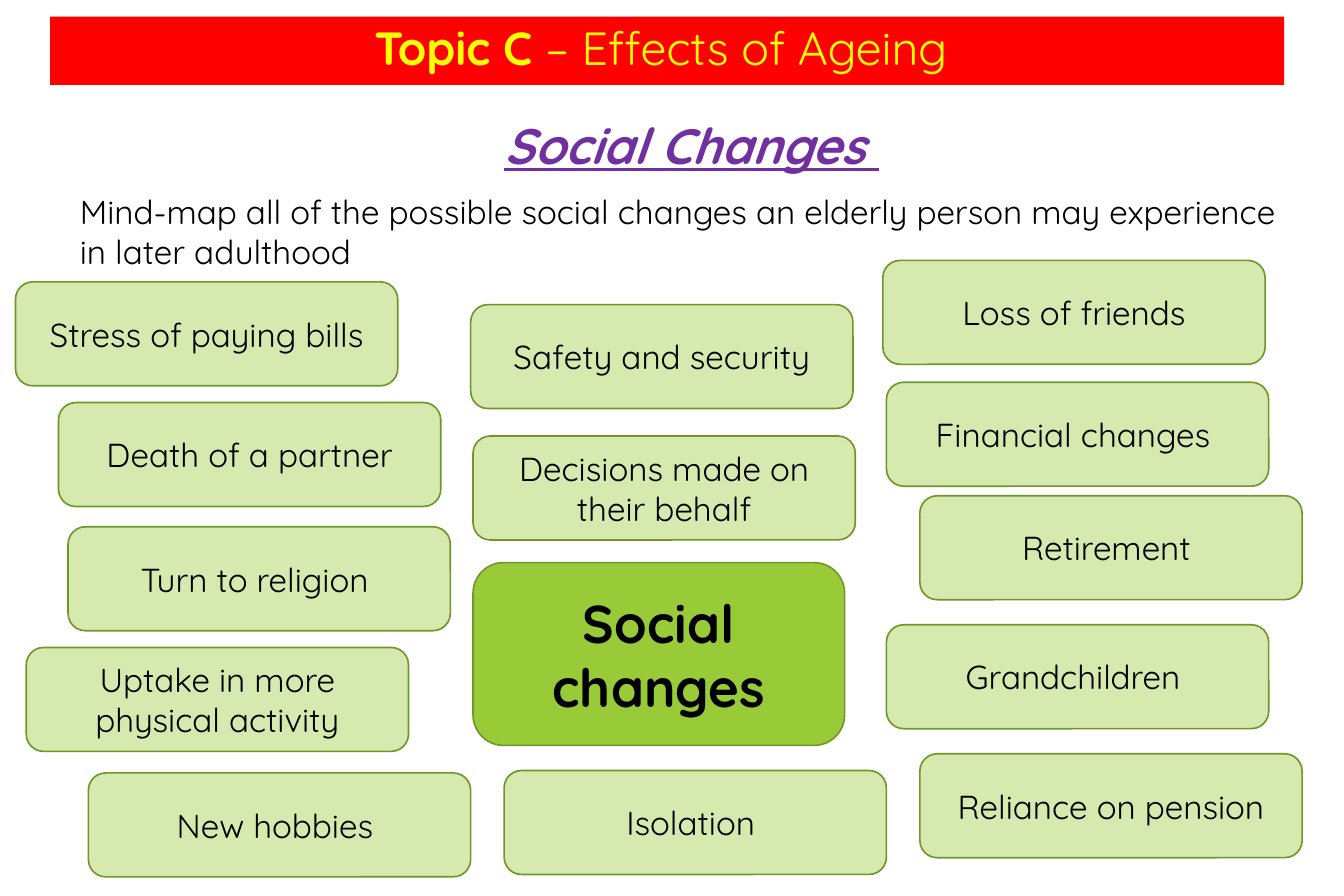
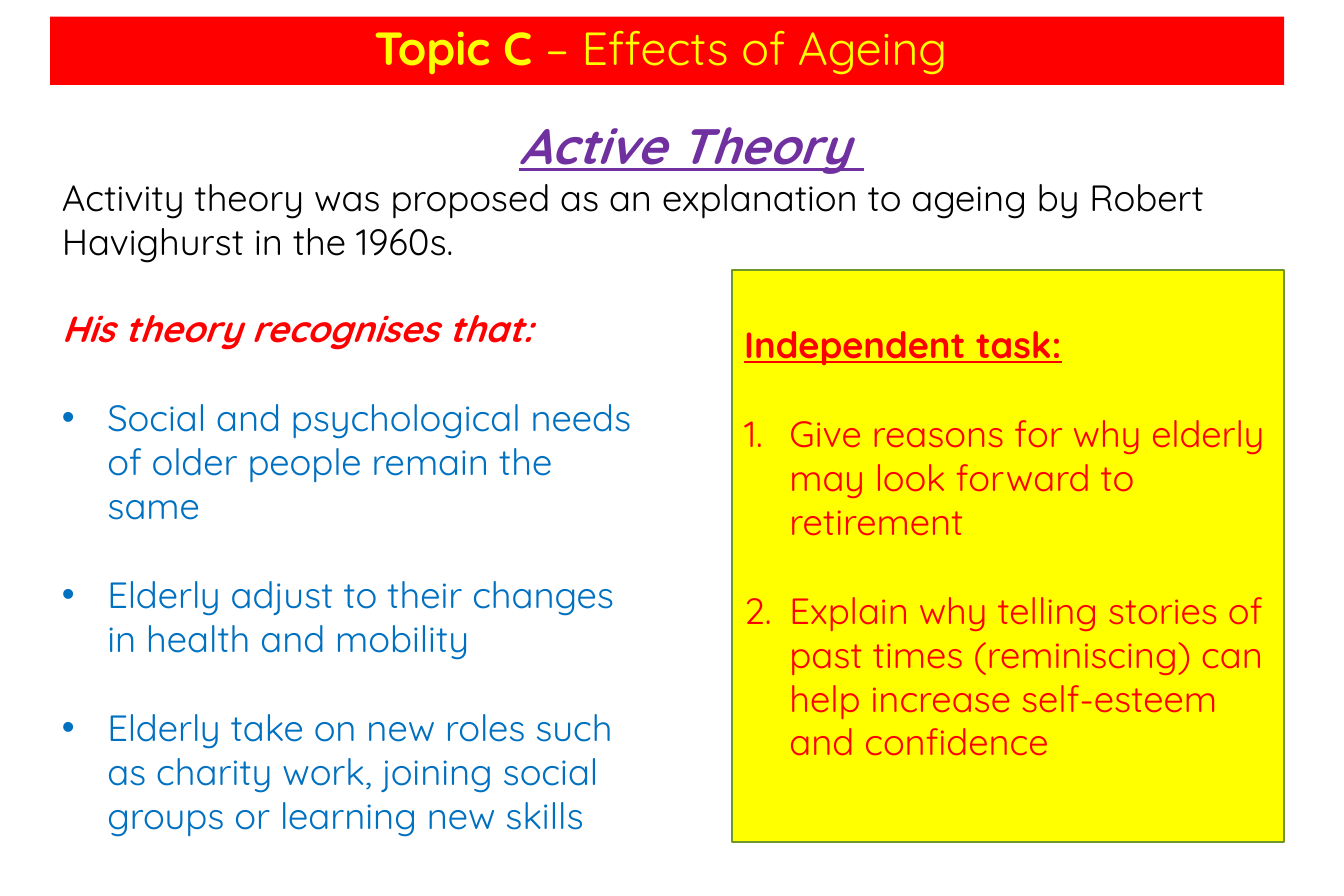
"""Build two lesson slides on the social effects of ageing and activity theory."""
from lxml.etree import SubElement
from pptx import Presentation
from pptx.dml.color import RGBColor
from pptx.enum.shapes import MSO_SHAPE
from pptx.enum.text import MSO_ANCHOR, PP_ALIGN
from pptx.oxml.ns import qn
from pptx.util import Inches, Pt

FONT = "Quicksand"
BLACK, RED, YELLOW = "000000", "FF0000", "FFFF00"
PURPLE, BLUE = "7030A0", "0070C0"
GREEN, PALE_GREEN, DARK_GREEN = "99CB38", "D6EAAF", "719629"
BODY_SIZE = 22
LINE_GAP = Pt(27.5)
LIST_INDENT = Inches(0.38)


def add_frame(slide, box, kind=None, fill=None, line=None, anchor=MSO_ANCHOR.TOP):
    """Add a text box, or a filled shape if kind is given, and return its text frame."""
    place = [Inches(length) for length in box]
    if kind is None:
        shape = slide.shapes.add_textbox(*place)
    else:
        shape = slide.shapes.add_shape(kind, *place)
        shape.shadow.inherit = False
        shape.fill.solid()
        shape.fill.fore_color.rgb = RGBColor.from_string(fill)
        if line:
            shape.line.color.rgb = RGBColor.from_string(line)
            shape.line.width = Pt(1)
        else:
            shape.line.fill.background()
    frame = shape.text_frame
    frame.word_wrap = True
    frame.vertical_anchor = anchor
    return frame


def add_run(paragraph, text, size, color, align=PP_ALIGN.LEFT, bold=False, italic=False, underline=False):
    """Append one formatted run to a paragraph."""
    paragraph.alignment = align
    run = paragraph.add_run()
    run.text = text
    font = run.font
    font.name, font.size = FONT, Pt(size)
    font.bold, font.italic, font.underline = bold, italic, underline
    font.color.rgb = RGBColor.from_string(color)


prs = Presentation()
prs.slide_width, prs.slide_height = Inches(11.25), Inches(7.5)

slides = []
for heading in ("Social Changes ", "Active Theory "):
    slide = prs.slides.add_slide(prs.slide_layouts[6])
    slides.append(slide)
    banner = add_frame(slide, (0.42, 0.14, 10.33, 0.57), MSO_SHAPE.RECTANGLE, RED, anchor=MSO_ANCHOR.MIDDLE)
    topic = banner.paragraphs[0]
    topic.line_spacing = 0.9
    add_run(topic, "Topic C ", 28, YELLOW, PP_ALIGN.CENTER, bold=True)
    add_run(topic, "– Effects of Ageing ", 28, YELLOW, PP_ALIGN.CENTER)
    subtitle = add_frame(slide, (0.42, 0.66, 10.74, 0.76)).paragraphs[0]
    subtitle.line_spacing = 1.5
    add_run(subtitle, heading, 30, PURPLE, PP_ALIGN.CENTER, bold=True, italic=True, underline=True)

mind_map, theory = slides

prompt = add_frame(mind_map, (0.57, 1.55, 10.33, 0.77))
add_run(prompt.paragraphs[0],
        "Mind-map all of the possible social changes an elderly person may experience in later adulthood",
        20, BLACK)

hub = add_frame(mind_map, (3.96, 4.71, 3.11, 1.53), MSO_SHAPE.ROUNDED_RECTANGLE,
                GREEN, DARK_GREEN, MSO_ANCHOR.MIDDLE)
add_run(hub.paragraphs[0], "Social changes", 32, BLACK, PP_ALIGN.CENTER, bold=True)

changes = [
    (0.13, 2.36, "Stress of paying bills"),
    (0.49, 3.37, "Death of a partner"),
    (0.57, 4.41, "Turn to religion "),
    (0.22, 5.42, "Uptake in more physical activity"),
    (0.74, 6.47, "New hobbies "),
    (3.94, 2.55, "Safety and security"),
    (3.96, 3.65, "Decisions made on their behalf"),
    (4.22, 6.45, "Isolation "),
    (7.39, 2.18, "Loss of friends"),
    (7.42, 3.2, "Financial changes "),
    (7.7, 4.15, "Retirement "),
    (7.42, 5.23, "Grandchildren "),
    (7.7, 6.31, "Reliance on pension"),
]
for left, top, change in changes:
    idea = add_frame(mind_map, (left, top, 3.2, 0.87), MSO_SHAPE.ROUNDED_RECTANGLE,
                     PALE_GREEN, DARK_GREEN, MSO_ANCHOR.MIDDLE)
    add_run(idea.paragraphs[0], change, 20, BLACK, PP_ALIGN.CENTER)

intro = add_frame(theory, (0.42, 1.42, 10.33, 0.84))
add_run(intro.paragraphs[0],
        "Activity theory was proposed as an explanation to ageing by Robert Havighurst in the 1960s.",
        BODY_SIZE, BLACK)

beliefs = add_frame(theory, (0.42, 2.51, 5.07, 4.54))
add_run(beliefs.paragraphs[0], "His theory recognises that:", BODY_SIZE, RED, bold=True, italic=True)

task = add_frame(theory, (6.13, 2.26, 4.62, 4.79), MSO_SHAPE.RECTANGLE, YELLOW, DARK_GREEN)
task.margin_top = Inches(0.05) + LINE_GAP
add_run(task.paragraphs[0], "Independent task:", BODY_SIZE, RED, bold=True, underline=True)

lists = [
    (beliefs, BLUE, "a:buChar", {"char": "•"}, [
        "Social and psychological needs of older people remain the same",
        "Elderly adjust to their changes in health and mobility",
        "Elderly take on new roles such as charity work, joining social groups or learning new skills",
    ]),
    (task, RED, "a:buAutoNum", {"type": "arabicPeriod"}, [
        "Give reasons for why elderly may look forward to retirement",
        "Explain why telling stories of past times (reminiscing) can help increase self-esteem and confidence",
    ]),
]
for frame, color, marker, attributes, items in lists:
    for item in items:
        point = frame.add_paragraph()
        point.space_before = LINE_GAP
        properties = point._p.get_or_add_pPr()
        properties.set("marL", str(LIST_INDENT))
        properties.set("indent", str(-LIST_INDENT))
        if marker == "a:buChar":
            SubElement(properties, qn("a:buFont"), typeface="Arial")
        SubElement(properties, qn(marker), attributes)
        add_run(point, item, BODY_SIZE, color)

prs.save("out.pptx")
